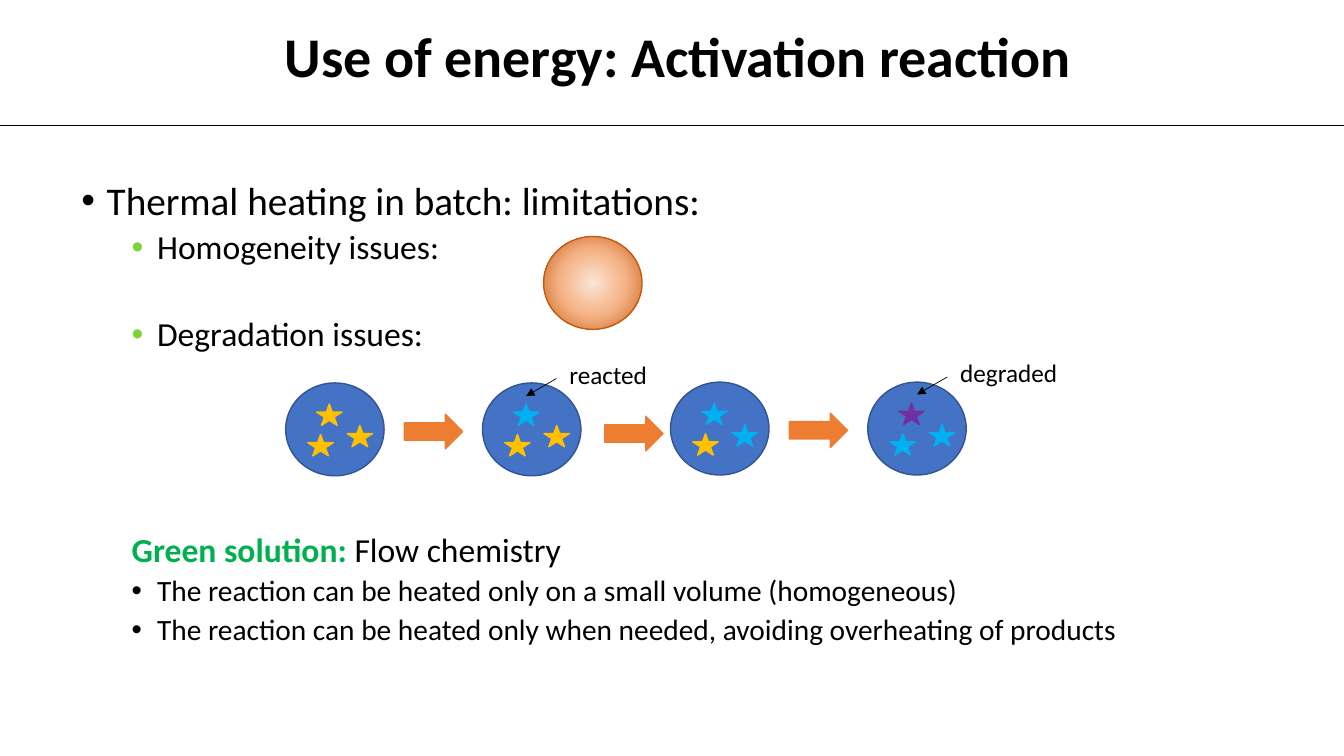
from pptx import Presentation
from pptx.dml.color import RGBColor
from pptx.enum.shapes import MSO_CONNECTOR, MSO_SHAPE
from pptx.enum.text import PP_ALIGN
from pptx.oxml import parse_xml
from pptx.oxml.ns import nsdecls
from pptx.util import Cm, Pt

COLORS = {
    "black": "000000", "lime": "7FD13B", "green": "00B050",
    "blue": "4472C4", "navy": "325491", "orange": "ED7D31", "rust": "C55A11",
    "peach": "F4B183", "cream": "FBE5D6",
    "fresh": "FFC000", "reacted": "00B0F0", "degraded": "7030A0",
}
FONT = "Calibri"


def add_part(kind, left, top, width, height, fill, line):
    part = slide.shapes.add_shape(kind, Cm(left), Cm(top), Cm(width), Cm(height))
    part.shadow.inherit = False
    part.fill.solid()
    part.fill.fore_color.rgb = RGBColor.from_string(COLORS[fill])
    part.line.color.rgb = RGBColor.from_string(COLORS[line])
    part.line.width = Pt(1)
    return part


def add_line(x1, y1, x2, y2):
    line = slide.shapes.add_connector(
        MSO_CONNECTOR.STRAIGHT, Cm(x1), Cm(y1), Cm(x2), Cm(y2))
    line.line.color.rgb = RGBColor.from_string(COLORS["black"])
    line.line.width = Pt(0.5)
    line._element.spPr.append(parse_xml(f"<a:effectLst {nsdecls('a')}/>"))
    return line


prs = Presentation()
prs.slide_width, prs.slide_height = Cm(33.87), Cm(19.05)
slide = prs.slides.add_slide(prs.slide_layouts[6])

add_line(0, 3.15, 33.87, 3.15)

heading = slide.shapes.add_textbox(Cm(6.63), Cm(0.43), Cm(20.9), Cm(1.96)).text_frame
heading.word_wrap = False
title = heading.paragraphs[0]
title.text = "Use of energy: Activation reaction"
title.alignment = PP_ALIGN.CENTER
title.font.name, title.font.size, title.font.bold = FONT, Pt(40), True
title.font.color.rgb = RGBColor.from_string(COLORS["black"])

body = slide.shapes.add_textbox(Cm(1.8), Cm(4.45), Cm(31.14), Cm(13.54)).text_frame
body.word_wrap = True
points = [
    ([("Thermal heating in batch: limitations:", "black")], 28, 0, 0.64, "black"),
    ([("Homogeneity issues:", "black")], 24, 5, 1.91, "lime"),
    ([("Degradation issues:", "black")], 24, 36, 1.91, "lime"),
    ([("Green solution: ", "green"), ("Flow chemistry", "black")], 24, 128, 1.27, None),
    ([("The reaction can be heated only on a small volume (homogeneous)", "black")],
     21, 5, 1.91, "black"),
    ([("The reaction can be heated only when needed, avoiding overheating of products",
       "black")], 21, 5, 1.91, "black"),
]
for i, (runs, size, gap, margin, bullet) in enumerate(points):
    point = body.add_paragraph() if i else body.paragraphs[0]
    point.line_spacing = 0.9
    point.space_before = Pt(gap)
    properties = point._p.get_or_add_pPr()
    properties.set("marL", str(Cm(margin)))
    if bullet:
        properties.set("indent", str(Cm(-0.64)))
        for xml in (
            f'<a:buClr {nsdecls("a")}><a:srgbClr val="{COLORS[bullet]}"/></a:buClr>',
            f'<a:buFont {nsdecls("a")} typeface="Arial"/>',
            f'<a:buChar {nsdecls("a")} char="•"/>',
        ):
            properties.append(parse_xml(xml))
    point.font.name, point.font.size = FONT, Pt(size)
    for words, color in runs:
        run = point.add_run()
        run.text = words
        run.font.color.rgb = RGBColor.from_string(COLORS[color])
        if color == "green":
            run.font.bold = True

hot_batch = add_part(MSO_SHAPE.OVAL, 13.7, 5.96, 2.48, 2.34, "cream", "rust")
stops = "".join(
    f'<a:gs pos="{position}"><a:srgbClr val="{COLORS[color]}"/></a:gs>'
    for position, color in ((0, "cream"), (50000, "peach"), (100000, "rust")))
glow = parse_xml(
    f'<a:gradFill {nsdecls("a")} rotWithShape="1"><a:gsLst>{stops}</a:gsLst>'
    '<a:path path="circle"><a:fillToRect l="50000" t="50000" r="50000" b="50000"/>'
    '</a:path></a:gradFill>')
outline = hot_batch._element.spPr
outline.replace(outline[2], glow)

star_offsets = [(0.78, 0.53), (1.55, 1.07), (0.56, 1.3)]
stages = [
    (7.2, 9.65, ("fresh", "fresh", "fresh")),
    (12.16, 9.65, ("reacted", "fresh", "fresh")),
    (16.9, 9.63, ("reacted", "reacted", "fresh")),
    (21.87, 9.63, ("degraded", "reacted", "reacted")),
]
for left, top, molecules in stages:
    add_part(MSO_SHAPE.OVAL, left, top, 2.48, 2.34, "blue", "navy")
    for (dx, dy), state in zip(star_offsets, molecules):
        add_part(MSO_SHAPE.STAR_5_POINT, left + dx, top + dy, 0.64, 0.54, state, state)

for left, top in ((10.19, 10.44), (15.24, 10.49), (19.89, 10.41)):
    add_part(MSO_SHAPE.RIGHT_ARROW, left, top, 1.47, 0.87, "orange", "orange")

for words, left, top in (("reacted", 14.1, 8.92), ("degraded", 23.95, 8.88)):
    frame = slide.shapes.add_textbox(Cm(left), Cm(top), Cm(4.67), Cm(1.03)).text_frame
    frame.word_wrap = True
    label = frame.paragraphs[0]
    label.text = words
    label.font.name, label.font.size = FONT, Pt(18)
    label.font.color.rgb = RGBColor.from_string(COLORS["black"])
    pointer = add_line(left - 0.08, top + 0.62, left - 0.84, top + 1.06)
    pointer.line._get_or_add_ln().append(
        parse_xml(f'<a:tailEnd {nsdecls("a")} type="triangle"/>'))

prs.save("out.pptx")
